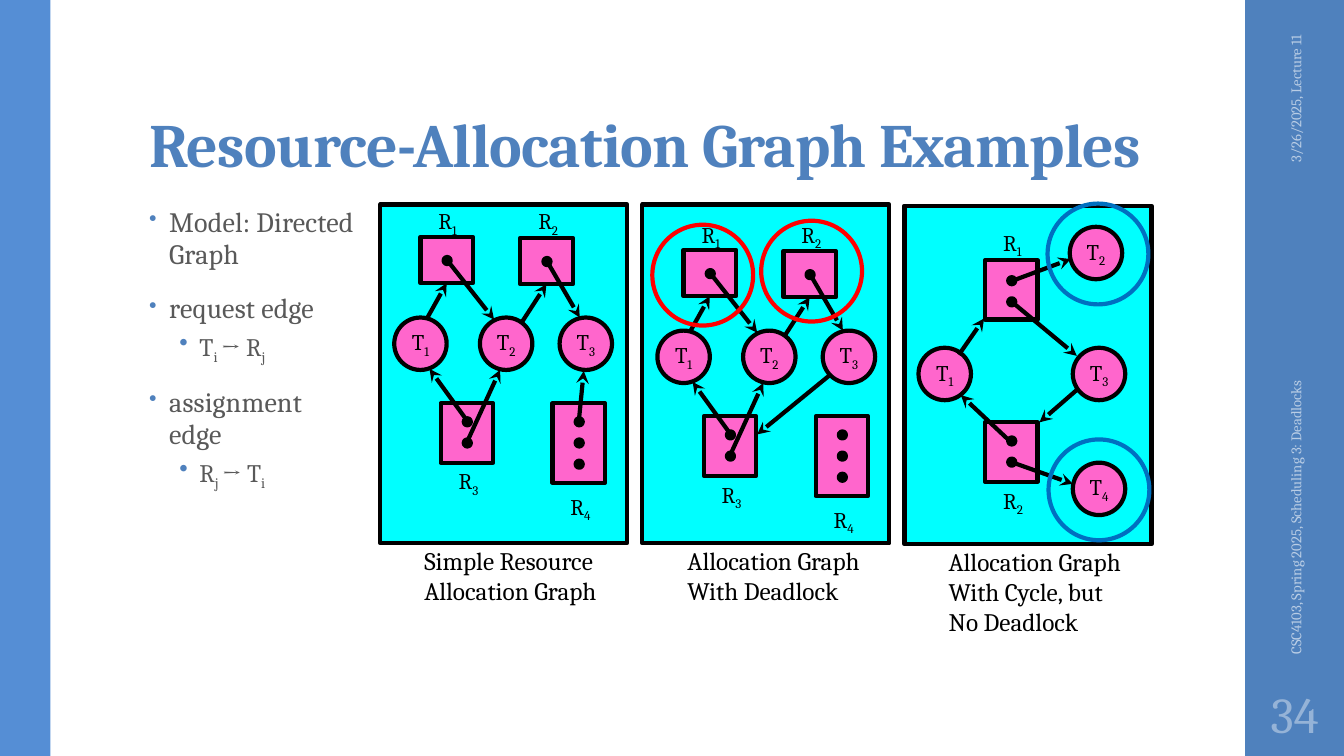
import pptx
import pptx.util
import pptx.dml.color
import pptx.enum.shapes
import pptx.enum.text
import lxml.etree

Cm, Pt = pptx.util.Cm, pptx.util.Pt
ANCHOR = pptx.enum.text.MSO_ANCHOR
ALIGN = pptx.enum.text.PP_ALIGN
FIT = pptx.enum.text.MSO_AUTO_SIZE
RECT = pptx.enum.shapes.MSO_SHAPE.RECTANGLE
OVAL = pptx.enum.shapes.MSO_SHAPE.OVAL
UNIT = 2.54  # one layout unit in centimetres
BLUE, PINK, CYAN, BLACK = "4F81BD", "FF66CC", "00FFFF", "000000"

deck = pptx.Presentation()
deck.slide_width, deck.slide_height = Cm(13.33 * UNIT), Cm(7.5 * UNIT)
slide = deck.slides.add_slide(deck.slide_layouts[5])


def color(code):
    return pptx.dml.color.RGBColor.from_string(code)


def draw(kind, box, fill=None, outline=None, lines=(), size=16, ink=BLACK,
         align=ALIGN.LEFT, **frame_format):
    """Add a shape (or a text box if kind is None); "|_" starts a subscript."""
    place = [Cm(value * UNIT) for value in box]
    if kind is None:
        item = slide.shapes.add_textbox(*place)
    else:
        item = slide.shapes.add_shape(kind, *place)
        item.shadow.inherit = False
        if fill:
            item.fill.solid()
            item.fill.fore_color.rgb = color(fill)
        else:
            item.fill.background()
        if outline:
            item.line.color.rgb = color(outline)
            item.line.width = Pt(3)
        else:
            item.line.fill.background()
    frame = item.text_frame
    for name, value in frame_format.items():
        setattr(frame, name, value)
    for number, line in enumerate(lines):
        paragraph = frame.add_paragraph() if number else frame.paragraphs[0]
        paragraph.alignment = align
        for part in line.split("|"):
            run = paragraph.add_run()
            run.text = part.lstrip("_")
            for name, value in {"name": "Cambria", "size": Pt(size)}.items():
                setattr(run.font, name, value)
            run.font.color.rgb = color(ink)
            if part.startswith("_"):
                run.font._element.set("baseline", "-25000")
    return item


# Side bands
draw(RECT, (12.35, 0, 0.98, 7.5), BLUE)
draw(RECT, (0, 0, 0.5, 7.5), "558ED5")

# Title
title = slide.shapes.title
title_format = {"left": 1.38, "top": 0.32, "width": 10.6, "height": 1.53}
for name, value in title_format.items():
    setattr(title, name, Cm(value * UNIT))
frame_format = {"text": "Resource-Allocation Graph Examples", "word_wrap": True,
                "auto_size": FIT.NONE, "vertical_anchor": ANCHOR.BOTTOM,
                "margin_top": Cm(0.08), "margin_bottom": Cm(0.13)}
for name, value in frame_format.items():
    setattr(title.text_frame, name, value)
heading = title.text_frame.paragraphs[0]
heading.alignment, heading.line_spacing = ALIGN.LEFT, 0.9
heading_font = heading.runs[0].font
for name, value in {"name": "Cambria", "size": Pt(44), "bold": True}.items():
    setattr(heading_font, name, value)
heading_font.color.rgb = color(BLUE)
heading_font._element.set("spc", "-50")

# Model description: bullets and sub-bullets
points = ["Model: Directed Graph", "request edge", "T|_i |→ R|_j",
          "assignment edge", "R|_j |→ T|_i"]
model = draw(None, (1.38, 2, 2.29, 4.76), lines=points, size=20, ink="595959",
             word_wrap=True)
for paragraph in model.text_frame.paragraphs:
    is_formula = len(paragraph.runs) > 1
    paragraph.level = int(is_formula)
    paragraph.line_spacing = 0.9 if is_formula else 0.95
    paragraph.space_before = Pt(3 if is_formula else 14)
    paragraph.space_after = Pt(3 if is_formula else 2)
    for run in paragraph.runs:
        run.font.size = Pt(18 if is_formula else 20)
        run.font._element.set("spc", "0" if is_formula else "10")
    settings = paragraph._p.get_or_add_pPr()
    settings.set("marL", str(Cm((0.5 if is_formula else 0.2) * UNIT)))
    settings.set("indent", str(-Cm(0.2 * UNIT)))
    bullet_color = settings.makeelement(pptx.oxml.ns.qn("a:buClr"), {})
    lxml.etree.SubElement(bullet_color, pptx.oxml.ns.qn("a:srgbClr"), val=BLUE)
    settings.append(bullet_color)
    lxml.etree.SubElement(settings, pptx.oxml.ns.qn("a:buSzPct"),
                          val="100000" if is_formula else "80000")
    lxml.etree.SubElement(settings, pptx.oxml.ns.qn("a:buChar"), char="•")

# Date, footer and slide number
for text, box, align in [
        ("3/26/2025, Lecture 11", (11.81, 1.09, 2.08, 0.4), ALIGN.RIGHT),
        ("CSC4103, Spring 2025, Scheduling 3: Deadlocks",
         (10.89, 4.43, 3.92, 0.4), ALIGN.LEFT)]:
    margin_note = draw(None, box, lines=[text], size=10.5, ink="B9CDE5", align=align,
                       word_wrap=True, vertical_anchor=ANCHOR.MIDDLE)
    margin_note.rotation = 270
draw(None, (12.35, 6.75, 0.98, 0.65), lines=["34"], size=36, ink="95B3D7",
     align=ALIGN.CENTER, word_wrap=True, vertical_anchor=ANCHOR.MIDDLE,
     margin_left=Cm(0.13), margin_right=Cm(0.13))

# Graph parts. Threads: left, top. Resources: left, top, height, label offset,
# dot offsets. Edges: start, end, resource whose bottom middle is the end.
simple_threads = {"T|_1": (3.91, 3.15), "T|_2": (4.76, 3.15), "T|_3": (5.55, 3.15)}
simple_resources = {
    "R|_1": (4.17, 2.35, 0.46, -0.34, [0.2]),
    "R|_2": (5.16, 2.36, 0.46, -0.35, [0.2]),
    "R|_3": (4.37, 4, 0.59, 0.59, [0.15, 0.36]),
    "R|_4": (5.48, 4, 0.79, 0.84, [0.15, 0.36, 0.57])}
shared_edges = [
    (4.24, 3.15, 4.44, 2.82, "R|_1"), (4.45, 2.6, 4.9, 3.17, None),
    (5.18, 3.19, 5.39, 2.84, "R|_2"), (5.43, 2.6, 5.75, 3.15, None),
    (4.63, 4.17, 4.26, 3.66, None), (4.63, 4.39, 4.96, 3.67, None)]
cycle_threads = {"T|_1": (9.11, 3.45), "T|_2": (10.61, 2.25),
                 "T|_3": (10.64, 3.45), "T|_4": (10.64, 4.59)}
cycle_resources = {"R|_1": (9.77, 2.58, 0.59, -0.36, [0.17, 0.38]),
                   "R|_2": (9.77, 4.19, 0.59, 0.59, [0.15, 0.36])}
cycle_edges = [
    (9.51, 3.52, 9.76, 3.16, None), (10.02, 4.38, 9.53, 3.92, None),
    (10.02, 4.58, 10.64, 4.8, None), (10.69, 3.86, 10.31, 4.19, None),
    (10.03, 2.99, 10.68, 3.53, None), (10.03, 2.79, 10.62, 2.57, None)]

# Each graph: frame corner, shift of its parts, parts, caption corner and lines
graphs = [
    ((3.77, 2.03), (0, 0), simple_threads, simple_resources,
     shared_edges + [(5.74, 4.19, 5.79, 3.68, None)],
     (4.11, 5.36), ["Simple Resource", "Allocation Graph"]),
    ((6.37, 2.03), (2.61, 0.13), simple_threads, simple_resources,
     shared_edges + [(5.61, 3.6, 4.9, 4.18, None)],
     (6.72, 5.36), ["Allocation Graph", "With Deadlock"]),
    ((8.97, 2.04), (0, 0), cycle_threads, cycle_resources, cycle_edges,
     (9.31, 5.37), ["Allocation Graph", "With Cycle, but", "No Deadlock"])]

for corner, (dx, dy), threads, resources, edges, caption_at, caption in graphs:
    draw(RECT, (*corner, 2.45, 3.36), CYAN, BLACK)
    for thread, (x, y) in threads.items():
        draw(OVAL, (x + dx, y + dy, 0.52, 0.52), PINK, BLACK, [thread],
             align=ALIGN.CENTER, word_wrap=False, vertical_anchor=ANCHOR.MIDDLE)
    nodes = {}
    for resource, (x, y, height, label_dy, dots) in resources.items():
        x, y = x + dx, y + dy
        nodes[resource] = draw(RECT, (x, y, 0.52, height), PINK, BLACK)
        for dot_dy in dots:
            draw(OVAL, (x + 0.23, y + dot_dy, 0.07, 0.07), BLACK, BLACK)
        draw(None, (x + 0.08, y + label_dy, 0.45, 0.37), lines=[resource],
             word_wrap=False, auto_size=FIT.SHAPE_TO_FIT_TEXT)
    for x1, y1, x2, y2, target in edges:
        ends = [Cm(v * UNIT) for v in (x1 + dx, y1 + dy, x2 + dx, y2 + dy)]
        edge = slide.shapes.add_connector(
            pptx.enum.shapes.MSO_CONNECTOR.STRAIGHT, *ends)
        if target:
            edge.end_connect(nodes[target], 2)
        edge.line.color.rgb = color(BLACK)
        edge.line.width = Pt(3)
        lxml.etree.SubElement(edge.line._get_or_add_ln(),
                              pptx.oxml.ns.qn("a:tailEnd"), type="stealth")
        lxml.etree.SubElement(edge._element.spPr, pptx.oxml.ns.qn("a:effectLst"))
    draw(None, (*caption_at, 2.2, 0.1 + 0.305 * len(caption)), lines=caption,
         size=18, word_wrap=False, auto_size=FIT.SHAPE_TO_FIT_TEXT)

# Highlight rings
for x, y, ring in [(7.55, 2.19, "FF0000"), (6.47, 2.23, "FF0000"),
                   (10.39, 2.02, "0070C0"), (10.4, 4.36, "0070C0")]:
    draw(OVAL, (x, y, 1, 1), outline=ring)

deck.save("out.pptx")
